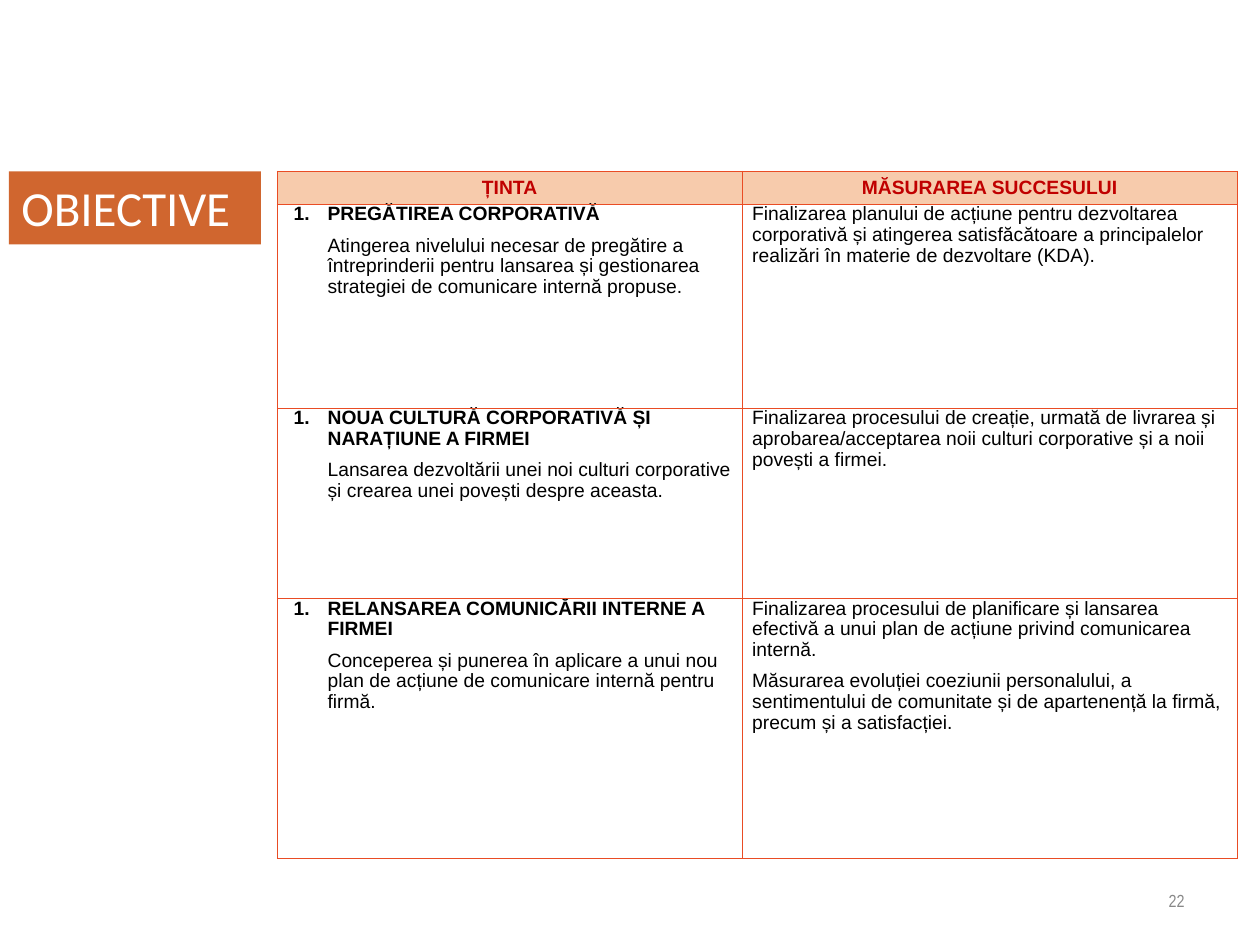
from lxml import etree
from pptx import Presentation
from pptx.dml.color import RGBColor
from pptx.enum.text import MSO_ANCHOR, MSO_AUTO_SIZE, PP_ALIGN
from pptx.oxml.ns import qn
from pptx.util import Inches, Pt

LEFT, CENTER, RIGHT = PP_ALIGN.LEFT, PP_ALIGN.CENTER, PP_ALIGN.RIGHT
TOP, MIDDLE = MSO_ANCHOR.TOP, MSO_ANCHOR.MIDDLE
NO_AUTOFIT = MSO_AUTO_SIZE.NONE
TITLE_ONLY = 5

COLORS = {
    "banner": "D0662F", "header": "F7CBAC", "heading": "C00000",
    "border": "E94C24", "text": "000000", "white": "FFFFFF", "number": "888888",
}

HEADERS = ("ȚINTA", "MĂSURAREA SUCCESULUI")
# Target heading, target description, measures of success
OBJECTIVES = [
    ("PREGĂTIREA CORPORATIVĂ",
     "Atingerea nivelului necesar de pregătire a întreprinderii pentru lansarea "
     "și gestionarea strategiei de comunicare internă propuse.",
     ["Finalizarea planului de acțiune pentru dezvoltarea corporativă și atingerea "
      "satisfăcătoare a principalelor realizări în materie de dezvoltare (KDA)."]),
    ("NOUA CULTURĂ CORPORATIVĂ ȘI NARAȚIUNE A FIRMEI",
     "Lansarea dezvoltării unei noi culturi corporative și crearea unei povești "
     "despre aceasta.",
     ["Finalizarea procesului de creație, urmată de livrarea și aprobarea/acceptarea "
      "noii culturi corporative și a noii povești a firmei."]),
    ("RELANSAREA COMUNICĂRII INTERNE A FIRMEI",
     "Conceperea și punerea în aplicare a unui nou plan de acțiune de comunicare "
     "internă pentru firmă.",
     ["Finalizarea procesului de planificare și lansarea efectivă a unui plan de "
      "acțiune privind comunicarea internă.",
      "Măsurarea evoluției coeziunii personalului, a sentimentului de comunitate și "
      "de apartenență la firmă, precum și a satisfacției."]),
]
COLUMN_WIDTHS = (3.69, 3.93)
ROW_HEIGHTS = (0.26, 1.62, 1.51, 2.06)


def color(name):
    return RGBColor.from_string(COLORS[name])


def write(frame, text, first=True, size=11, font="Arial", fill="text", bold=False,
          align=LEFT, indent=0, numbered=False, spacing=None):
    """Write one paragraph, reusing the empty one when it is the first."""
    paragraph = frame.paragraphs[0] if first else frame.add_paragraph()
    properties = paragraph._p.get_or_add_pPr()
    if indent:
        properties.set("marL", str(Inches(indent)))
        properties.set("indent", str(Inches(-0.27 if numbered else 0)))
    if numbered:
        bullet_color = etree.SubElement(properties, qn("a:buClr"))
        etree.SubElement(bullet_color, qn("a:srgbClr"), val=COLORS[fill])
        etree.SubElement(properties, qn("a:buFont"), typeface="+mj-lt")
        etree.SubElement(properties, qn("a:buAutoNum"), type="arabicPeriod")
    paragraph.alignment = align
    paragraph.space_before = Pt(0 if first else 6)
    if spacing:
        paragraph.line_spacing = spacing
    run = paragraph.add_run()
    run.text = text
    run.font.size, run.font.name, run.font.bold = Pt(size), font, bold
    run.font.color.rgb = color(fill)


class SlideBuilder:
    """Holds the cell style and the current slide."""

    side_margin = 0.08
    border_width = 0.5
    line_spacing = 0.97

    def __init__(self, slide):
        self.slide = slide

    def banner(self, text, left, top, width, height):
        title = self.slide.shapes.title
        title.left, title.top = Inches(left), Inches(top)
        title.width, title.height = Inches(width), Inches(height)
        title.fill.solid()
        title.fill.fore_color.rgb = color("banner")
        frame = title.text_frame
        frame.auto_size, frame.vertical_anchor = NO_AUTOFIT, TOP
        write(frame, text, size=28, font="Calibri", fill="white")

    def page_number(self, text, left, top, width, height):
        box = self.slide.shapes.add_textbox(
            Inches(left), Inches(top), Inches(width), Inches(height))
        frame = box.text_frame
        frame.word_wrap, frame.vertical_anchor = True, MIDDLE
        write(frame, text, size=10, font="Arial Narrow", fill="number", align=RIGHT)

    def style_cell(self, cell, fill=None, anchor=TOP):
        cell.margin_left = cell.margin_right = Inches(self.side_margin)
        cell.margin_top = cell.margin_bottom = 0
        cell.vertical_anchor = anchor
        properties = cell._tc.get_or_add_tcPr()
        for side in ("lnL", "lnR", "lnT", "lnB"):
            line = etree.SubElement(properties, qn(f"a:{side}"),
                                    w=str(Pt(self.border_width)))
            solid = etree.SubElement(line, qn("a:solidFill"))
            etree.SubElement(solid, qn("a:srgbClr"), val=COLORS["border"])
        if fill:
            cell.fill.solid()
            cell.fill.fore_color.rgb = color(fill)
        else:
            cell.fill.background()

    def objectives_table(self, left, top):
        table = self.slide.shapes.add_table(
            len(ROW_HEIGHTS), len(COLUMN_WIDTHS), Inches(left), Inches(top),
            Inches(sum(COLUMN_WIDTHS)), Inches(sum(ROW_HEIGHTS))).table
        table.horz_banding = False
        for column, width in zip(table.columns, COLUMN_WIDTHS):
            column.width = Inches(width)
        for row, height in zip(table.rows, ROW_HEIGHTS):
            row.height = Inches(height)

        # Header row
        for cell, text in zip(table.rows[0].cells, HEADERS):
            self.style_cell(cell, "header", MIDDLE)
            write(cell.text_frame, text, fill="heading", bold=True, align=CENTER)

        # One row per objective
        for row, (heading, description, measures) in enumerate(OBJECTIVES, 1):
            target, success = table.cell(row, 0), table.cell(row, 1)
            self.style_cell(target)
            self.style_cell(success)
            write(target.text_frame, heading, bold=True, indent=0.32, numbered=True,
                  spacing=self.line_spacing)
            write(target.text_frame, description, first=False, indent=0.32,
                  spacing=self.line_spacing)
            for index, measure in enumerate(measures):
                write(success.text_frame, measure, first=index == 0,
                      spacing=self.line_spacing)


def main():
    presentation = Presentation()
    presentation.slide_width, presentation.slide_height = Inches(10), Inches(7.5)
    layout = presentation.slide_layouts[TITLE_ONLY]
    builder = SlideBuilder(presentation.slides.add_slide(layout))
    builder.page_number("22", 7.17, 6.95, 2.33, 0.4)
    builder.banner("OBIECTIVE", 0.07, 1.36, 2, 0.58)
    builder.objectives_table(2.2, 1.36)
    presentation.save("out.pptx")


if __name__ == "__main__":
    main()
